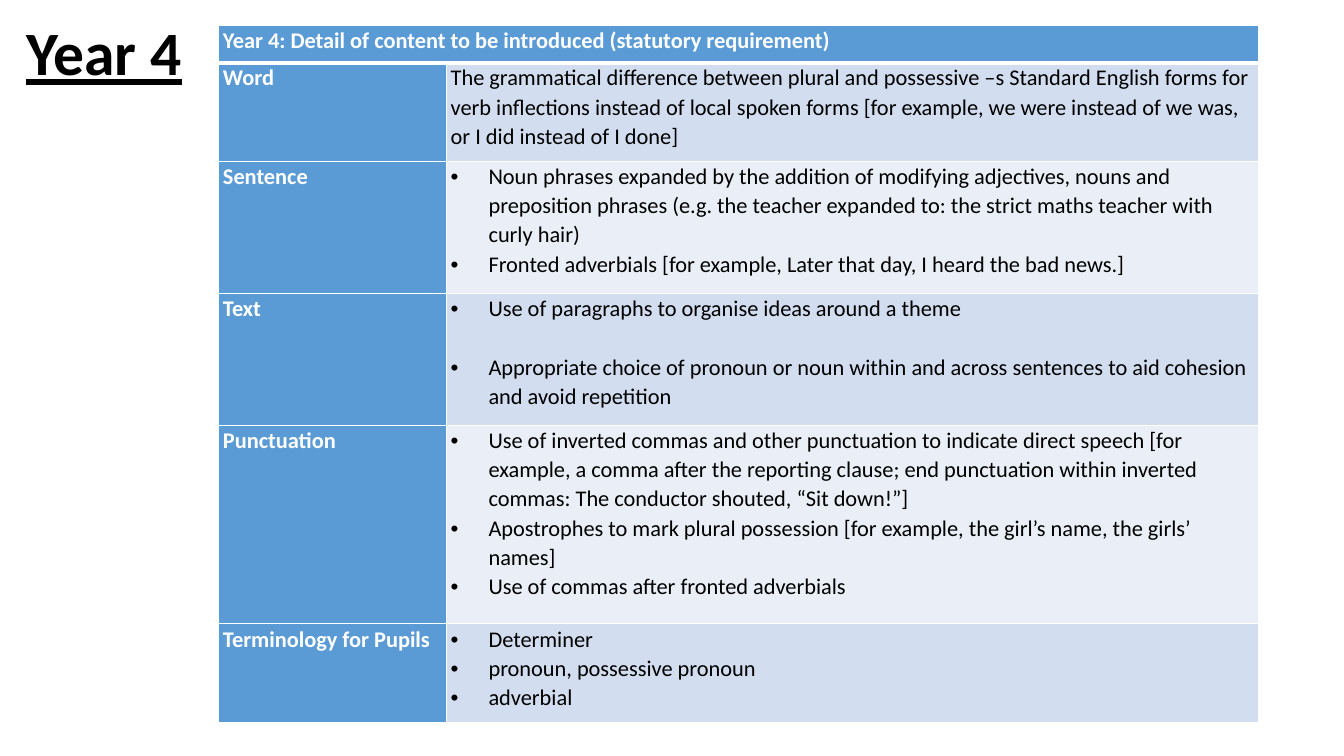
from pptx import Presentation
from pptx.dml.color import RGBColor
from pptx.enum.text import MSO_ANCHOR, PP_ALIGN
from pptx.oxml import parse_xml
from pptx.oxml.ns import nsdecls
from pptx.util import Pt

COLORS = {"blue": "5B9BD5", "light": "D2DEEF", "pale": "EAEFF7",
          "white": "FFFFFF", "black": "000000"}
HEADING = "Year 4: Detail of content to be introduced (statutory requirement)"
COLUMN_WIDTHS = [162.7, 580.3]
HEADER_HEIGHT = 26.5
LINE_HEIGHT = 21
CONTENT = [
    ("Word", 70.3, [
        "The grammatical difference between plural and possessive –s Standard English forms for "
        "verb inflections instead of local spoken forms [for example, we were instead of we was, "
        "or I did instead of I done]"]),
    ("Sentence", 94.3, [
        "Noun phrases expanded by the addition of modifying adjectives, nouns and preposition "
        "phrases (e.g. the teacher expanded to: the strict maths teacher with curly hair)",
        "Fronted adverbials [for example, Later that day, I heard the bad news.]"]),
    ("Text", 94.3, [
        "Use of paragraphs to organise ideas around a theme",
        "Appropriate choice of pronoun or noun within and across sentences to aid cohesion "
        "and avoid repetition"]),
    ("Punctuation", 142, [
        "Use of inverted commas and other punctuation to indicate direct speech [for example, "
        "a comma after the reporting clause; end punctuation within inverted commas: "
        "The conductor shouted, “Sit down!”]",
        "Apostrophes to mark plural possession [for example, the girl’s name, the girls’ names]",
        "Use of commas after fronted adverbials"]),
    ("Terminology for Pupils", 70.3, [
        "Determiner", "pronoun, possessive pronoun", "adverbial"]),
]


class CurriculumPage:
    """Holds the text style and the slide being built."""

    def __init__(self, deck, font="Calibri", size=16):
        self.font, self.size = font, size
        self.page = deck.slides.add_slide(deck.slide_layouts[5])

    def style(self, paragraph, color, bold, size=None, underline=None):
        """Format every run of a paragraph."""
        for span in paragraph.runs:
            span.font.name = self.font
            span.font.size = Pt(size or self.size)
            span.font.bold = bold
            span.font.underline = underline
            span.font.color.rgb = RGBColor.from_string(COLORS[color])

    def title(self, text):
        """Fill and place the title placeholder."""
        box = self.page.shapes.title
        box.left, box.top, box.width, box.height = Pt(11.5), Pt(-12.2), Pt(828), Pt(104.4)
        frame = box.text_frame
        frame.text = text
        frame.vertical_anchor = MSO_ANCHOR.MIDDLE
        paragraph = frame.paragraphs[0]
        paragraph.alignment = PP_ALIGN.LEFT
        paragraph.line_spacing = 0.9
        self.style(paragraph, "black", True, 44, True)

    def bullet(self, paragraph):
        """Give a paragraph a hanging bullet."""
        properties = paragraph._p.get_or_add_pPr()
        properties.set("marL", str(Pt(27)))
        properties.set("indent", str(Pt(-27)))
        properties.append(parse_xml(f'<a:buFont {nsdecls("a")} typeface="Arial"/>'))
        properties.append(parse_xml(f'<a:buChar {nsdecls("a")} char="•"/>'))

    def borders(self, cell, top=1, bottom=1):
        """Draw white lines on the four sides of a cell."""
        sides = {"lnL": 1, "lnR": 1, "lnT": top, "lnB": bottom}
        for index, (side, width) in enumerate(sides.items()):
            cell._tc.get_or_add_tcPr().insert(index, parse_xml(
                f'<a:{side} {nsdecls("a")} w="{Pt(width)}"><a:solidFill>'
                f'<a:srgbClr val="{COLORS["white"]}"/></a:solidFill></a:{side}>'))

    def cell(self, cell, lines, fill, color="white", bold=True, bulleted=False, gap=0):
        """Fill a table cell with paragraphs."""
        cell.fill.solid()
        cell.fill.fore_color.rgb = RGBColor.from_string(COLORS[fill])
        cell.margin_left = cell.margin_right = Pt(3)
        cell.margin_top = cell.margin_bottom = Pt(0)
        cell.text_frame.text = "\n".join(lines)
        for index, paragraph in enumerate(cell.text_frame.paragraphs):
            paragraph.line_spacing = 1.07
            if index and gap:
                paragraph.space_before = Pt(gap)
            if bulleted:
                self.bullet(paragraph)
            self.style(paragraph, color, bold)

    def table(self, heading, content):
        """Add the table of content by category."""
        heights = [HEADER_HEIGHT] + [height for _, height, _ in content]
        table = self.page.shapes.add_table(
            len(heights), len(COLUMN_WIDTHS), Pt(156.3), Pt(18.3),
            Pt(sum(COLUMN_WIDTHS)), Pt(sum(heights))).table
        for column, width in zip(table.columns, COLUMN_WIDTHS):
            column.width = Pt(width)
        for row, height in zip(table.rows, heights):
            row.height = Pt(height)
        self.cell(table.cell(0, 0), [heading], "blue")
        table.cell(0, 0).merge(table.cell(0, 1))
        for number, (label, _, lines) in enumerate(content, 1):
            self.cell(table.cell(number, 0), [label], "blue")
            self.cell(table.cell(number, 1), lines, "light" if number % 2 else "pale",
                      "black", False, len(lines) > 1, LINE_HEIGHT if label == "Text" else 0)
        for number, row in enumerate(table.rows):
            for cell in row.cells:
                self.borders(cell, 3 if number == 1 else 1, 3 if number == 0 else 1)


def main():
    """Build and save the deck."""
    deck = Presentation()
    deck.slide_width, deck.slide_height = Pt(960), Pt(540)
    page = CurriculumPage(deck)
    page.title("Year 4")
    page.table(HEADING, CONTENT)
    deck.save("out.pptx")


if __name__ == "__main__":
    main()
